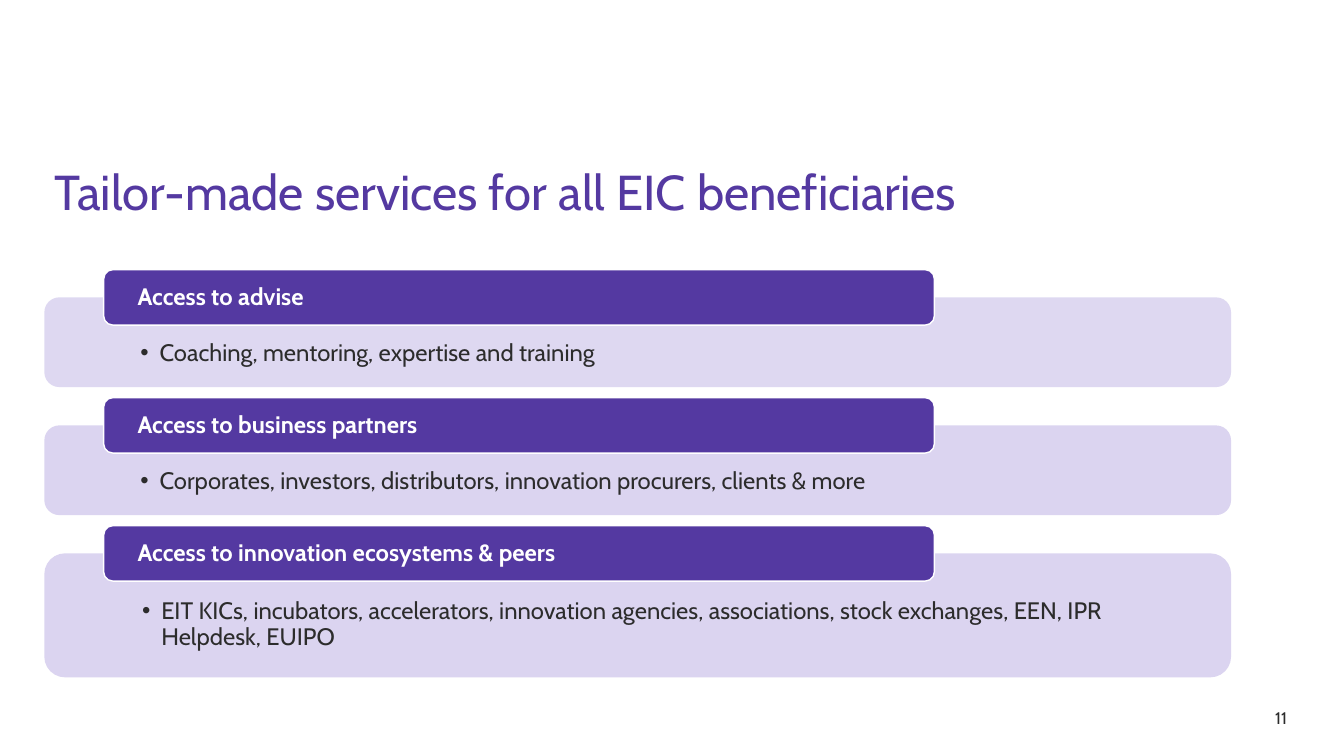
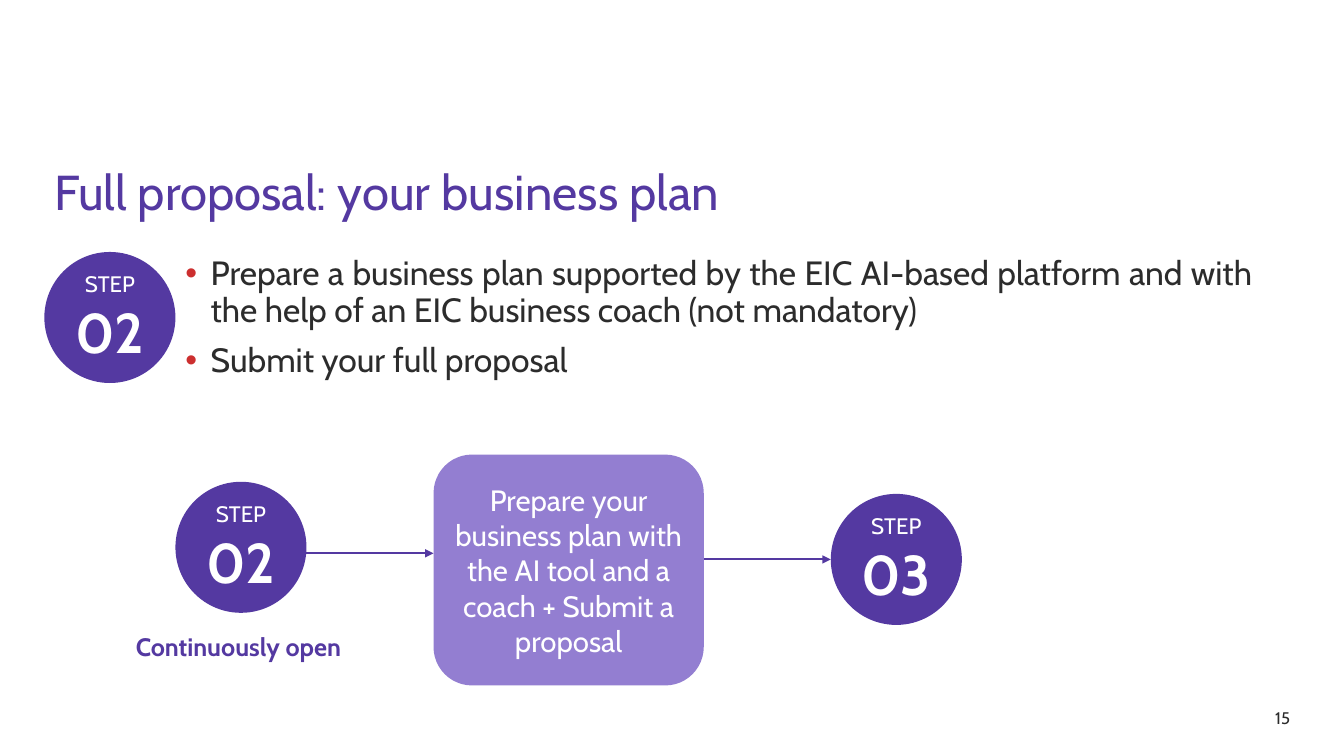
from dataclasses import dataclass

from lxml.etree import SubElement
from pptx import Presentation
from pptx.dml.color import RGBColor
from pptx.enum.shapes import MSO_CONNECTOR, MSO_SHAPE
from pptx.enum.text import MSO_ANCHOR, PP_ALIGN
from pptx.oxml.ns import qn
from pptx.util import Emu, Inches, Pt


@dataclass(frozen=True)
class Theme:
    font: str = "Cabin"
    purple: str = "5439A1"
    lilac: str = "937ED1"
    pale: str = "DBD4F0"
    ink: str = "2C2C2C"
    white: str = "FFFFFF"
    red: str = "CC2F2F"
    title_size: int = 35
    number_size: int = 40
    bullet_size: int = 24
    plan_size: int = 21
    caption_size: int = 18
    card_size: int = 17
    step_size: int = 16
    footer_size: int = 12
    tight: float = 0.9


@dataclass(frozen=True)
class Box:
    left: float
    top: float
    width: float
    height: float

    def area(self, left, top, width, height):
        """Return a box whose position is relative to this one."""
        return Box(self.left + left, self.top + top, width, height)

    def in_inches(self):
        return [Inches(v) for v in (self.left, self.top, self.width, self.height)]


THEME = Theme()
SLIDE_WIDTH, SLIDE_HEIGHT = 13.33, 7.5
MARGIN = 0.44
CIRCLE = 1.3
TITLE_BOX = Box(MARGIN, 1.62, 12.08, 0.8)
NUMBER_BOX = Box(12.55, 6.97, 0.7, 0.4)


def add_bullet(paragraph, indent, color):
    properties = paragraph._p.get_or_add_pPr()
    properties.set("marL", str(Inches(indent)))
    properties.set("indent", str(-Inches(indent)))
    bullet_color = SubElement(properties, qn("a:buClr"))
    SubElement(bullet_color, qn("a:srgbClr"), val=color)
    SubElement(properties, qn("a:buFont"), typeface="Arial")
    SubElement(properties, qn("a:buChar"), char="•")


def write(shape, text, *, size, color=THEME.ink, bold=False, align=PP_ALIGN.LEFT,
          spacing=None, before=0, indent=0, bullet_color=THEME.ink):
    """Add one paragraph to a shape, filling its empty first one when there is one."""
    frame = shape.text_frame
    paragraph = frame.paragraphs[0] if not frame.text else frame.add_paragraph()
    if indent:
        add_bullet(paragraph, indent, bullet_color)
    paragraph.alignment = align
    if spacing:
        paragraph.line_spacing = spacing
    if before:
        paragraph.space_before = Pt(before)
    run = paragraph.add_run()
    run.text = text
    run.font.name = THEME.font
    run.font.size = Pt(size)
    run.font.bold = bold
    run.font.color.rgb = RGBColor.from_string(color)


def set_frame(shape, anchor, insets):
    frame = shape.text_frame
    frame.word_wrap = True
    frame.vertical_anchor = anchor
    (frame.margin_left, frame.margin_top,
     frame.margin_right, frame.margin_bottom) = [Inches(v) for v in insets]


def add_text_box(slide, box, anchor=MSO_ANCHOR.TOP):
    shape = slide.shapes.add_textbox(*box.in_inches())
    set_frame(shape, anchor, (0.1, 0.05, 0.1, 0.05))
    return shape


def add_panel(slide, kind, box, fill, *, line=None, alpha=None,
              anchor=MSO_ANCHOR.MIDDLE, insets=(0.1, 0.05, 0.1, 0.05)):
    shape = slide.shapes.add_shape(kind, *box.in_inches())
    shape.shadow.inherit = False
    shape.fill.solid()
    shape.fill.fore_color.rgb = RGBColor.from_string(fill)
    if alpha:
        color = shape._element.spPr.find(qn("a:solidFill"))[0]
        SubElement(color, qn("a:alpha"), val=str(alpha * 1000))
    if line:
        shape.line.color.rgb = RGBColor.from_string(line)
        shape.line.width = Pt(1)
    else:
        shape.line.fill.background()
    set_frame(shape, anchor, insets)
    return shape


def add_arrow(slide, box):
    """Draw an arrow along the top edge of a box."""
    left, top, width, _ = box.in_inches()
    arrow = slide.shapes.add_connector(
        MSO_CONNECTOR.STRAIGHT, left, top, Emu(left + width), top)
    arrow.line.color.rgb = RGBColor.from_string(THEME.purple)
    arrow.line.width = Pt(1.5)
    properties = arrow._element.spPr
    SubElement(properties.get_or_add_ln(), qn("a:tailEnd"), type="triangle")
    SubElement(properties, qn("a:effectLst"))


def add_titled_slide(presentation, title, number):
    slide = presentation.slides.add_slide(presentation.slide_layouts[6])
    write(add_text_box(slide, NUMBER_BOX), number, size=THEME.footer_size)
    write(add_text_box(slide, TITLE_BOX), title, size=THEME.title_size,
          color=THEME.purple, spacing=THEME.tight)
    return slide


def add_service_card(slide, box, heading, detail, alpha=None):
    """Place a pale card with a heading bar across its top edge."""
    card = add_panel(slide, MSO_SHAPE.ROUNDED_RECTANGLE, box, THEME.pale, alpha=alpha,
                     anchor=MSO_ANCHOR.TOP, insets=(0.91, 0.39, 0.91, 0.13))
    write(card, detail, size=THEME.card_size, spacing=THEME.tight, indent=0.19)
    bar_height = 0.55
    bar_box = box.area(box.width * 0.05, -bar_height / 2, box.width * 0.7, bar_height)
    bar = add_panel(slide, MSO_SHAPE.ROUNDED_RECTANGLE, bar_box, THEME.purple,
                    line=THEME.white, insets=(0.31, 0, 0.31, 0))
    write(bar, heading, size=THEME.card_size, color=THEME.white, bold=True,
          spacing=THEME.tight)


def add_step_circle(slide, box, number):
    circle = add_panel(slide, MSO_SHAPE.OVAL, box, THEME.purple,
                       insets=(0, 0.05, 0, 0.05))
    for text, size, bold in (("STEP", THEME.step_size, False),
                             (number, THEME.number_size, True)):
        write(circle, text, size=size, color=THEME.white, bold=bold,
              align=PP_ALIGN.CENTER)


def add_step_summary(slide, box, number, points):
    """Place a step circle with its bullet points to the right."""
    add_step_circle(slide, box.area(0, 0, CIRCLE, CIRCLE), number)
    points_box = add_text_box(
        slide, box.area(CIRCLE, 0, box.width - CIRCLE, box.height))
    for index, point in enumerate(points):
        write(points_box, point, size=THEME.bullet_size, align=PP_ALIGN.JUSTIFY,
              spacing=THEME.tight, before=10 if index else 0, indent=0.25,
              bullet_color=THEME.red)


def add_step_flow(slide, box, first, action, last, caption):
    """Place circle, arrow, action, arrow and circle from left to right."""
    action_width = 2.68
    gap = (box.width - 2 * CIRCLE - action_width) / 2
    action_left = CIRCLE + gap
    action_right = action_left + action_width
    add_arrow(slide, box.area(CIRCLE, 0.98, gap, 0))
    add_step_circle(slide, box.area(0, 0.27, CIRCLE, CIRCLE), first)
    panel = add_panel(slide, MSO_SHAPE.ROUNDED_RECTANGLE,
                      box.area(action_left, 0, action_width, box.height), THEME.lilac)
    write(panel, action, size=THEME.plan_size, color=THEME.white,
          align=PP_ALIGN.CENTER)
    add_step_circle(slide, box.area(action_right + gap, 0.39, CIRCLE, CIRCLE), last)
    add_arrow(slide, box.area(action_right, 1.04, gap, 0))
    caption_box = add_text_box(slide, box.area(-1.12, 1.68, 3.49, 0.44),
                               MSO_ANCHOR.MIDDLE)
    write(caption_box, caption, size=THEME.caption_size, color=THEME.purple,
          bold=True, align=PP_ALIGN.CENTER)


def build_services_slide(presentation):
    slide = add_titled_slide(
        presentation, "Tailor-made services for all EIC beneficiaries", "11")
    services = (
        ("Access to advise", "Coaching, mentoring, expertise and training", 0.89, 90),
        ("Access to business partners",
         "Corporates, investors, distributors, innovation procurers, clients & more",
         0.89, None),
        ("Access to innovation ecosystems & peers",
         "EIT KICs, incubators, accelerators, innovation agencies, associations, "
         "stock exchanges, EEN, IPR Helpdesk, EUIPO", 1.23, None),
    )
    top, gap = 2.95, 0.38
    for heading, detail, height, alpha in services:
        add_service_card(slide, Box(MARGIN, top, 11.77, height), heading, detail, alpha)
        top += height + gap


def build_proposal_slide(presentation):
    slide = add_titled_slide(presentation, "Full proposal: your business plan", "15")
    add_step_summary(slide, Box(MARGIN, 2.5, 12.08, 1.6), "02", (
        "Prepare a business plan supported by the EIC AI-based platform and with "
        "the help of an EIC business coach (not mandatory)",
        "Submit your full proposal",
    ))
    add_step_flow(
        slide, Box(MARGIN + CIRCLE, 4.51, 7.8, 2.29), "02",
        "Prepare your business plan with the AI tool and a coach + Submit a proposal",
        "03", "Continuously open")


def main():
    presentation = Presentation()
    presentation.slide_width = Inches(SLIDE_WIDTH)
    presentation.slide_height = Inches(SLIDE_HEIGHT)
    build_services_slide(presentation)
    build_proposal_slide(presentation)
    presentation.save("out.pptx")


if __name__ == "__main__":
    main()
